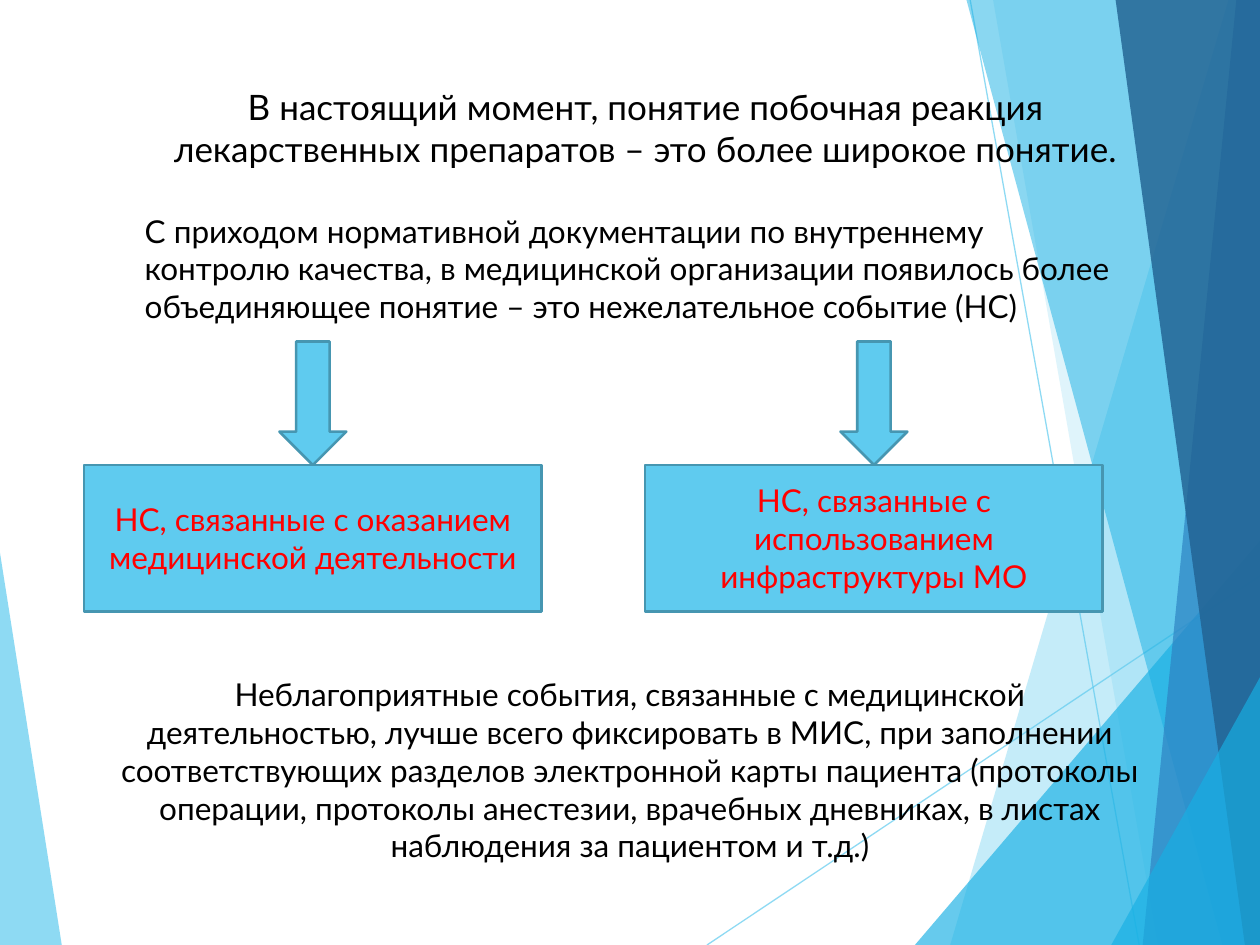
"""Build a slide on adverse events in a medical organisation."""
from lxml.etree import SubElement
from pptx import Presentation
from pptx.dml.color import RGBColor
from pptx.enum.shapes import MSO_CONNECTOR, MSO_SHAPE
from pptx.enum.text import MSO_ANCHOR as Anchor, MSO_AUTO_SIZE as AutoSize, PP_ALIGN as Align
from pptx.oxml.ns import qn
from pptx.util import Pt

WIDTH, HEIGHT = 720, 540
SKY, AZURE, BLUE, NAVY = "5FCBEF", "17B0E4", "2E83C3", "226292"
EDGE, BLACK, RED = "4696B1", "000000", "FF0000"

FACETS = [
    ([(0, 316), (35.3, HEIGHT), (0, HEIGHT)], SKY, 70),
    ([(702, 0), (543, HEIGHT), (WIDTH, HEIGHT), (WIDTH, 0)], SKY, 36),
    ([(567.5, 0), (661.7, HEIGHT), (WIDTH, HEIGHT), (WIDTH, 0)], SKY, 20),
    ([(522.8, HEIGHT), (WIDTH, 309), (WIDTH, HEIGHT)], AZURE, 66),
    ([(552.3, 0), (698.5, HEIGHT), (WIDTH, HEIGHT), (WIDTH, 0)], AZURE, 50),
    ([(706.5, 0), (653, HEIGHT), (WIDTH, HEIGHT), (WIDTH, 0)], BLUE, 70),
    ([(637.5, 0), (711.4, HEIGHT), (WIDTH, HEIGHT), (WIDTH, 0)], NAVY, 82),
    ([(635, HEIGHT), (WIDTH, 387), (WIDTH, HEIGHT)], AZURE, 66),
]
RAYS = [((404, HEIGHT), (WIDTH, 329)), ((554.4, 0), (651, HEIGHT))]

TITLE = ("В настоящий момент, понятие побочная реакция лекарственных препаратов "
         "– это более широкое понятие.")
INTRO = ("С приходом нормативной документации по внутреннему контролю качества, "
         "в медицинской организации появилось более объединяющее понятие "
         "– это нежелательное событие (НС)")
ADVICE = ("Неблагоприятные события, связанные с медицинской деятельностью, лучше всего "
          "фиксировать в МИС, при заполнении соответствующих разделов электронной карты "
          "пациента (протоколы операции, протоколы анестезии, врачебных дневниках, "
          "в листах наблюдения за пациентом и т.д.)")
CATEGORIES = ["НС, связанные с оказанием медицинской деятельности",
              "НС, связанные с использованием инфраструктуры МО"]
CATEGORY_LEFT, CATEGORY_STEP = 48, 320.6
CATEGORY_TOP, CATEGORY_WIDTH, CATEGORY_HEIGHT = 265.7, 261.6, 83.6
ARROW_WIDTH, ARROW_HEIGHT = 38.2, 70.6


def color(hex_code):
    return RGBColor.from_string(hex_code)


def set_opacity(parent, percent):
    rgb = next(parent.iter(qn("a:srgbClr")))
    SubElement(rgb, qn("a:alpha")).set("val", str(percent * 1000))


def add_facet(slide, corners, fill, opacity):
    start, *others = [(Pt(x), Pt(y)) for x, y in corners]
    builder = slide.shapes.build_freeform(*start)
    builder.add_line_segments(others, close=True)
    facet = builder.convert_to_shape()
    facet.shadow.inherit = False
    facet.fill.solid()
    facet.fill.fore_color.rgb = color(fill)
    facet.line.fill.background()
    set_opacity(facet._element.spPr, opacity)


def add_ray(slide, start, end):
    ray = slide.shapes.add_connector(
        MSO_CONNECTOR.STRAIGHT, *[Pt(value) for value in (*start, *end)])
    ray.line.color.rgb = color(SKY)
    ray.line.width = Pt(0.75)
    properties = ray._element.spPr
    set_opacity(properties, 70)
    SubElement(properties, qn("a:effectLst"))


def write(frame, text, size=18, ink=BLACK, align=Align.LEFT, anchor=Anchor.TOP):
    frame.word_wrap = True
    frame.vertical_anchor = anchor
    paragraph = frame.paragraphs[0]
    paragraph.alignment = align
    run = paragraph.add_run()
    run.text = text
    run.font.name = "Lato"
    run.font.size = Pt(size)
    run.font.color.rgb = color(ink)


def add_text(slide, box, text, **style):
    frame = slide.shapes.add_textbox(*[Pt(value) for value in box]).text_frame
    write(frame, text, **style)
    frame.auto_size = AutoSize.SHAPE_TO_FIT_TEXT


def add_block(slide, preset, box):
    block = slide.shapes.add_shape(preset, *[Pt(value) for value in box])
    block.shadow.inherit = False
    block.fill.solid()
    block.fill.fore_color.rgb = color(SKY)
    block.line.color.rgb = color(EDGE)
    block.line.width = Pt(1.5)
    return block


def add_category(slide, left, text):
    card = add_block(slide, MSO_SHAPE.RECTANGLE,
                     (left, CATEGORY_TOP, CATEGORY_WIDTH, CATEGORY_HEIGHT))
    write(card.text_frame, text, ink=RED, align=Align.CENTER, anchor=Anchor.MIDDLE)
    add_block(slide, MSO_SHAPE.DOWN_ARROW,
              (left + (CATEGORY_WIDTH - ARROW_WIDTH) / 2, CATEGORY_TOP - ARROW_HEIGHT,
               ARROW_WIDTH, ARROW_HEIGHT))


def main():
    deck = Presentation()
    deck.slide_width, deck.slide_height = Pt(WIDTH), Pt(HEIGHT)
    slide = deck.slides.add_slide(deck.slide_layouts[6])

    left_facet, *right_facets = FACETS
    add_facet(slide, *left_facet)
    for ray in RAYS:
        add_ray(slide, *ray)
    for facet in right_facets:
        add_facet(slide, *facet)

    add_text(slide, (67, 45.4, 604, 55.4), TITLE, size=20, align=Align.CENTER)
    add_text(slide, (75.6, 117.4, 575.3, 72.7), INTRO)
    for index, text in enumerate(CATEGORIES):
        add_category(slide, CATEGORY_LEFT + index * CATEGORY_STEP, text)
    add_text(slide, (59, 382.3, 602, 116.6), ADVICE, align=Align.CENTER)

    deck.save("out.pptx")


if __name__ == "__main__":
    main()
